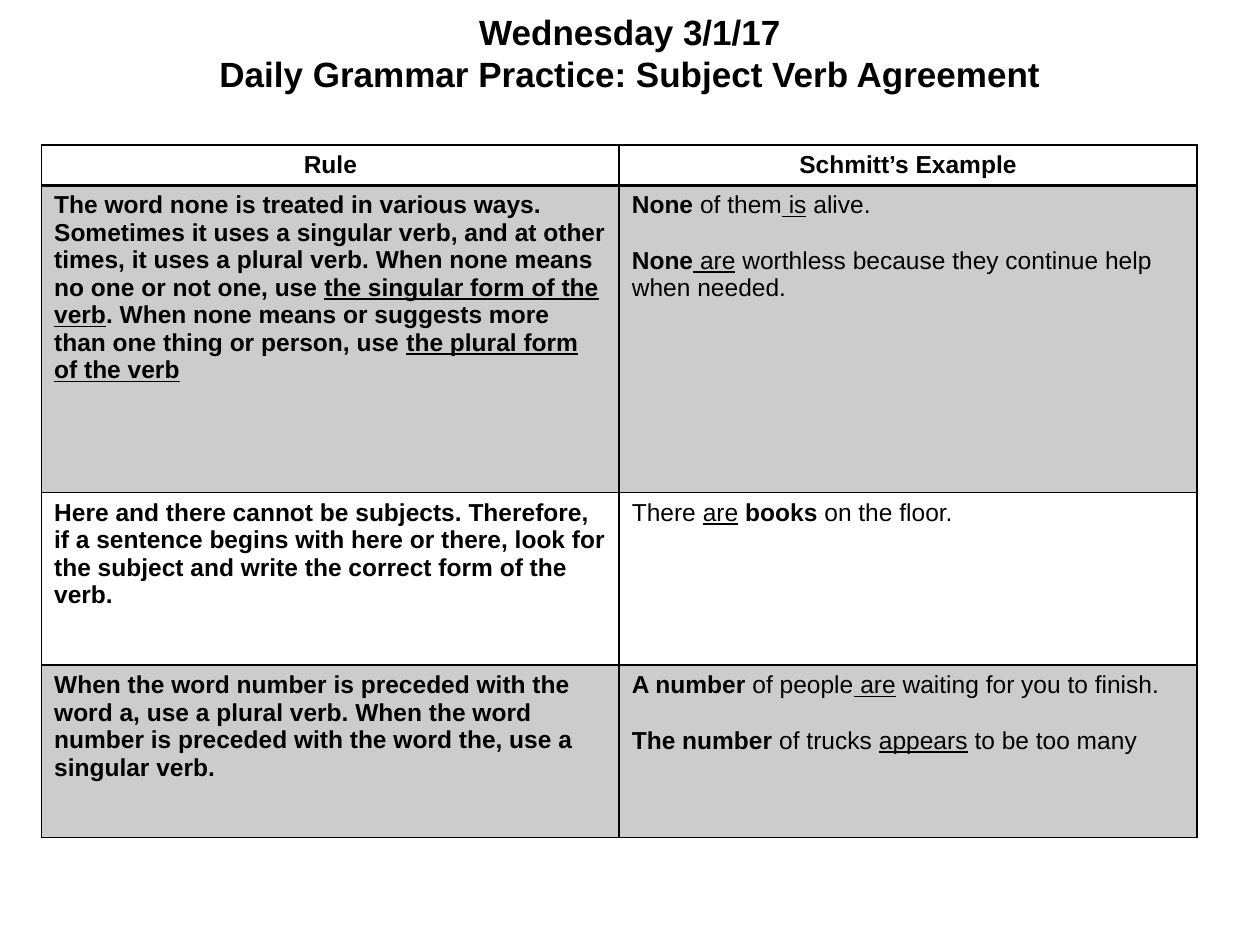
import dataclasses

import pptx
import pptx.dml.color
import pptx.enum.text
import pptx.oxml
import pptx.oxml.ns
import pptx.util

Inches = pptx.util.Inches
Pt = pptx.util.Pt
Align = pptx.enum.text.PP_ALIGN


@dataclasses.dataclass
class Theme:
    font: str = "Arial"
    ink: str = "000000"
    band: int = 20  # percent opacity of the shaded rows
    head: int = 20
    body: int = 14
    gap: int = 16
    thin: float = 1
    thick: float = 2


# A cell is a list of paragraphs; a paragraph is a list of (text, style) runs,
# where the style holds "b" for bold and "u" for underlined.
HEADS = ["Rule", "Schmitt’s Example"]
ROWS = [
    (
        [[
            ("The word none is treated in various ways. Sometimes it uses a "
             "singular verb, and at other times, it uses a plural verb. When "
             "none means no one or not one, use ", "b"),
            ("the singular form of the verb", "bu"),
            (". When none means or suggests more than one thing or person, "
             "use ", "b"),
            ("the plural form of the verb", "bu"),
        ]],
        [
            [("None", "b"), (" of them", ""), (" is", "u"), (" alive.", "")],
            [("None", "b"), (" are", "u"),
             (" worthless because they continue help when needed.", "")],
        ],
    ),
    (
        [[("Here and there cannot be subjects. Therefore, if a sentence "
           "begins with here or there, look for the subject and write the "
           "correct form of the verb.", "b")]],
        [[("There ", ""), ("are", "u"), (" ", ""), ("books", "b"),
          (" on the floor.", "")]],
    ),
    (
        [[("When the word number is preceded with the word a, use a plural "
           "verb. When the word number is preceded with the word the, use a "
           "singular verb.", "b")]],
        [
            [("A number", "b"), (" of people", ""), (" are", "u"),
             (" waiting for you to finish.", "")],
            [("The number", "b"), (" of trucks ", ""), ("appears", "u"),
             (" to be too many", "")],
        ],
    ),
]
HEIGHTS = [0.31, 2.44, 1.37, 1.37]


class Page:
    def __init__(self, deck, theme):
        self.theme = theme
        self.slide = deck.slides.add_slide(deck.slide_layouts[5])

    def style(self, font, size):
        font.name = self.theme.font
        font.size = Pt(size)
        font.color.rgb = pptx.dml.color.RGBColor.from_string(self.theme.ink)

    def title(self, text, left, top, width, height):
        shape = self.slide.shapes.title
        shape.left, shape.top = Inches(left), Inches(top)
        shape.width, shape.height = Inches(width), Inches(height)
        frame = shape.text_frame
        frame.text = text
        frame.vertical_anchor = pptx.enum.text.MSO_ANCHOR.MIDDLE
        frame.auto_size = pptx.enum.text.MSO_AUTO_SIZE.NONE
        para = frame.paragraphs[0]
        para.alignment = Align.CENTER
        self.style(para.font, self.theme.head)
        para.font.bold = True

    def words(self, cell, paras, align):
        frame = cell.text_frame
        for i, runs in enumerate(paras):
            para = frame.add_paragraph() if i else frame.paragraphs[0]
            para.alignment = align
            if i:
                para.space_before = Pt(self.theme.gap)
            self.style(para.font, self.theme.body)
            for text, marks in runs:
                run = para.add_run()
                run.text = text
                run.font.bold = "b" in marks
                run.font.underline = "u" in marks

    def paint(self, cell, shade):
        """Fill the cell with see-through ink, or leave it clear."""
        if not shade:
            cell.fill.background()
            return
        cell.fill.solid()
        cell.fill.fore_color.rgb = pptx.dml.color.RGBColor.from_string(
            self.theme.ink)
        color = cell._tc.tcPr.find(".//" + pptx.oxml.ns.qn("a:srgbClr"))
        alpha = pptx.oxml.parse_xml(
            f'<a:alpha {pptx.oxml.ns.nsdecls("a")} '
            f'val="{self.theme.band * 1000}"/>')
        color.append(alpha)

    def border(self, cell, top, bottom):
        thin = self.theme.thin
        sides = {"lnL": thin, "lnR": thin, "lnT": top, "lnB": bottom}
        props = cell._tc.get_or_add_tcPr()
        for i, (tag, width) in enumerate(sides.items()):
            line = pptx.oxml.parse_xml(
                f'<a:{tag} {pptx.oxml.ns.nsdecls("a")} w="{Pt(width)}">'
                f'<a:solidFill><a:srgbClr val="{self.theme.ink}"/>'
                f'</a:solidFill></a:{tag}>')
            props.insert(i, line)

    def table(self, heads, rows, heights, left, top, width):
        grid = self.slide.shapes.add_table(
            len(heights), len(heads), Inches(left), Inches(top),
            Inches(width), Inches(sum(heights))).table
        grid.horz_banding = False
        for row, height in zip(grid.rows, heights):
            row.height = Inches(height)
        first = [[[(head, "b")]] for head in heads]
        thin, thick = self.theme.thin, self.theme.thick
        for r, row in enumerate([first, *rows]):
            for c, paras in enumerate(row):
                cell = grid.cell(r, c)
                self.words(cell, paras, Align.LEFT if r else Align.CENTER)
                self.paint(cell, r % 2 == 1)
                self.border(cell, thick if r == 1 else thin,
                            thin if r else thick)


def main():
    deck = pptx.Presentation()
    deck.slide_width, deck.slide_height = Inches(10), Inches(7.5)
    page = Page(deck, Theme())
    page.title("Wednesday 3/1/17\vDaily Grammar Practice: "
               "Subject Verb Agreement", 0.5, 0, 9, 0.83)
    page.table(HEADS, ROWS, HEIGHTS, 0.33, 1.15, 9.17)
    deck.save("out.pptx")


if __name__ == "__main__":
    main()
